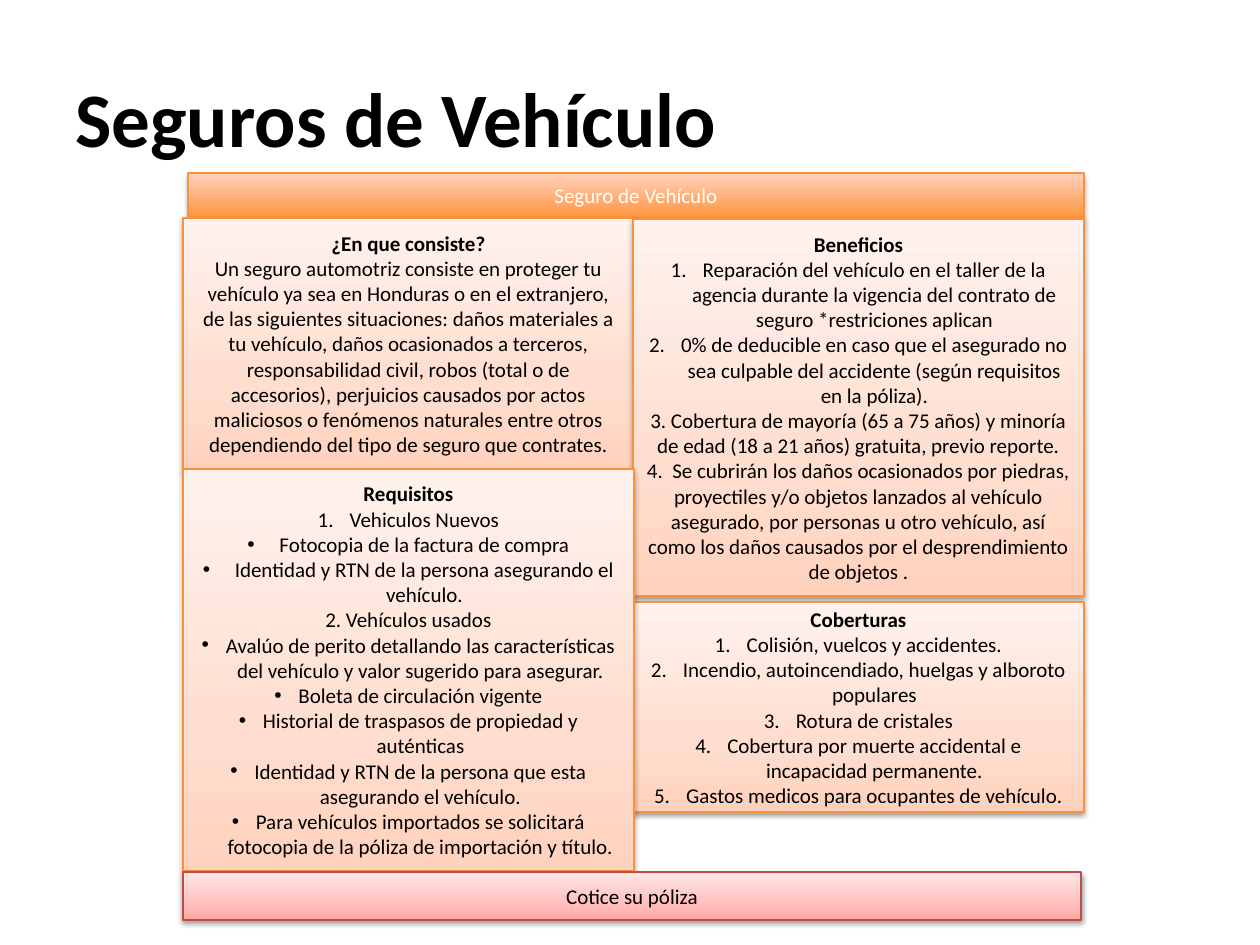
from dataclasses import dataclass

from lxml import etree
from pptx import Presentation
from pptx.dml.color import RGBColor
from pptx.enum.shapes import MSO_SHAPE
from pptx.enum.text import MSO_ANCHOR, PP_ALIGN
from pptx.oxml.ns import qn
from pptx.util import Inches, Pt

RECTANGLE = MSO_SHAPE.RECTANGLE
MIDDLE = MSO_ANCHOR.MIDDLE
CENTER = PP_ALIGN.CENTER

EMU_PER_PX = Inches(1) / 126
FONT = "Calibri"
BLACK = RGBColor(0x00, 0x00, 0x00)
WHITE = RGBColor(0xFF, 0xFF, 0xFF)
ORANGE_LINE = RGBColor(0xF6, 0x92, 0x40)
RED_LINE = RGBColor(0xBF, 0x4C, 0x48)

PLAIN, NUMBER, BULLET = "plain", "number", "bullet"
WIDE, NARROW = 32, 24


@dataclass(frozen=True)
class Line:
    text: str
    marker: str = PLAIN
    indent: int = WIDE
    bold: bool = False


@dataclass(frozen=True)
class Style:
    """Gradient stops run from bottom to top, positions in percent."""
    stops: tuple[tuple[int, RGBColor], ...]
    line: RGBColor
    text: RGBColor = BLACK
    shadow_distance: float = 1.6
    shadow_opacity: int = 38


@dataclass(frozen=True)
class Panel:
    left: int
    top: int
    width: int
    height: int
    style: Style
    lines: tuple[Line, ...]


HEADER = Style(
    ((0, RGBColor(0xFF, 0x95, 0x3E)), (100, RGBColor(0xFF, 0xD2, 0xBD))),
    ORANGE_LINE, WHITE, 1.8, 35)
ORANGE = Style(
    ((0, RGBColor(0xFF, 0xD2, 0xBD)), (35, RGBColor(0xFF, 0xDE, 0xD0)),
     (100, RGBColor(0xFF, 0xF2, 0xED))), ORANGE_LINE)
RED = Style(
    ((0, RGBColor(0xFF, 0xA6, 0xA5)), (35, RGBColor(0xFF, 0xC0, 0xBF)),
     (100, RGBColor(0xFF, 0xE7, 0xE7))), RED_LINE)

LEFT_COLUMN, RIGHT_COLUMN, COLUMN_WIDTH = 183, 633, 451

PANELS = (
    Panel(188, 173, 896, 45, HEADER, (Line("Seguro de Vehículo"),)),
    Panel(LEFT_COLUMN, 218, COLUMN_WIDTH, 251, ORANGE, (
        Line("¿En que consiste?", bold=True),
        Line("Un seguro automotriz consiste en proteger tu vehículo ya sea en "
             "Honduras o en el extranjero, de las siguientes situaciones: daños "
             "materiales a tu vehículo, daños ocasionados a terceros, "
             "responsabilidad civil, robos (total o de accesorios), perjuicios "
             "causados por actos maliciosos o fenómenos naturales entre otros "
             "dependiendo del tipo de seguro que contrates."),
    )),
    Panel(RIGHT_COLUMN, 219, COLUMN_WIDTH, 377, ORANGE, (
        Line("Beneficios", bold=True),
        Line("Reparación del vehículo en el taller de la agencia durante la "
             "vigencia del contrato de seguro *restriciones aplican", NUMBER),
        Line("0% de deducible en caso que el asegurado no sea culpable del "
             "accidente (según requisitos en la póliza).", NUMBER),
        Line("3. Cobertura de mayoría (65 a 75 años) y minoría de edad "
             "(18 a 21 años) gratuita, previo reporte."),
        Line("4.  Se cubrirán los daños ocasionados por piedras, proyectiles y/o "
             "objetos lanzados al vehículo asegurado, por personas u otro "
             "vehículo, así como los daños causados por el desprendimiento de "
             "objetos ."),
    )),
    Panel(RIGHT_COLUMN, 602, COLUMN_WIDTH, 210, ORANGE, (
        Line("Coberturas", bold=True),
        Line("Colisión, vuelcos y accidentes.", NUMBER),
        Line("Incendio, autoincendiado, huelgas y alboroto populares", NUMBER),
        Line("Rotura de cristales", NUMBER),
        Line("Cobertura por muerte accidental e incapacidad permanente.", NUMBER),
        Line("Gastos medicos para ocupantes de vehículo.", NUMBER),
    )),
    Panel(LEFT_COLUMN, 469, COLUMN_WIDTH, 402, ORANGE, (
        Line("Requisitos", bold=True),
        Line("Vehiculos Nuevos", NUMBER),
        Line("Fotocopia de la factura de compra", BULLET),
        Line("Identidad y RTN de la persona asegurando el vehículo.", BULLET),
        Line("2. Vehículos usados"),
        Line("Avalúo de perito detallando las características del vehículo y "
             "valor sugerido para asegurar.", BULLET, NARROW),
        Line("Boleta de circulación vigente", BULLET, NARROW),
        Line("Historial de traspasos de propiedad y auténticas", BULLET, NARROW),
        Line("Identidad y RTN de la persona que esta asegurando el vehículo.",
             BULLET, NARROW),
        Line("Para vehículos importados se solicitará fotocopia de la póliza de "
             "importación y título.", BULLET, NARROW),
    )),
    Panel(LEFT_COLUMN, 872, 898, 48, RED, (Line("Cotice su póliza"),)),
)


def px(length: int) -> int:
    return round(length * EMU_PER_PX)


def add_element(parent, tag: str, **attributes):
    return etree.SubElement(parent, qn(tag),
                            {key: str(value) for key, value in attributes.items()})


def set_gradient(shape, stops: tuple[tuple[int, RGBColor], ...]) -> None:
    shape.fill.gradient()
    shape.fill.gradient_angle = 90
    stop_list = shape._element.spPr.find(qn("a:gradFill")).find(qn("a:gsLst"))
    for stop in list(stop_list):
        stop_list.remove(stop)
    for position, color in stops:
        stop = add_element(stop_list, "a:gs", pos=position * 1000)
        add_element(stop, "a:srgbClr", val=color)


def set_shadow(shape, distance: float, opacity: int) -> None:
    shape.shadow.inherit = False
    effects = shape._element.spPr.find(qn("a:effectLst"))
    shadow = add_element(effects, "a:outerShdw", blurRad=Pt(3.1), dist=Pt(distance),
                         dir=90 * 60000, rotWithShape=0)
    color = add_element(shadow, "a:srgbClr", val=BLACK)
    add_element(color, "a:alpha", val=opacity * 1000)


def set_marker(paragraph, line: Line) -> None:
    properties = paragraph._p.get_or_add_pPr()
    properties.set("marL", str(px(line.indent)))
    properties.set("indent", str(-px(line.indent)))
    if line.marker == NUMBER:
        add_element(properties, "a:buFont", typeface=FONT)
        add_element(properties, "a:buAutoNum", type="arabicPeriod")
    else:
        add_element(properties, "a:buFont", typeface="Arial")
        add_element(properties, "a:buChar", char="•")


def set_font(paragraph, size: int, color: RGBColor, bold: bool) -> None:
    font = paragraph.font
    font.name, font.size, font.bold = FONT, Pt(size), bold
    font.color.rgb = color


def add_panel(slide, panel: Panel) -> None:
    shape = slide.shapes.add_shape(RECTANGLE, px(panel.left), px(panel.top),
                                   px(panel.width), px(panel.height))
    style = panel.style
    set_gradient(shape, style.stops)
    shape.line.color.rgb = style.line
    shape.line.width = Pt(0.75)
    set_shadow(shape, style.shadow_distance, style.shadow_opacity)
    frame = shape.text_frame
    frame.word_wrap = True
    frame.vertical_anchor = MIDDLE
    for index, line in enumerate(panel.lines):
        paragraph = frame.add_paragraph() if index else frame.paragraphs[0]
        paragraph.text = line.text
        paragraph.alignment = CENTER
        if line.marker != PLAIN:
            set_marker(paragraph, line)
        set_font(paragraph, 12, style.text, line.bold)


def add_title(slide, text: str) -> None:
    frame = slide.shapes.add_textbox(px(63), px(38), px(796), px(158)).text_frame
    frame.word_wrap = True
    frame.vertical_anchor = MIDDLE
    frame.text = text
    set_font(frame.paragraphs[0], 44, BLACK, True)


def main() -> None:
    presentation = Presentation()
    presentation.slide_width, presentation.slide_height = Inches(10), Inches(7.5)
    slide = presentation.slides.add_slide(presentation.slide_layouts[6])
    add_title(slide, "Seguros de Vehículo")
    for panel in PANELS:
        add_panel(slide, panel)
    presentation.save("out.pptx")


if __name__ == "__main__":
    main()
